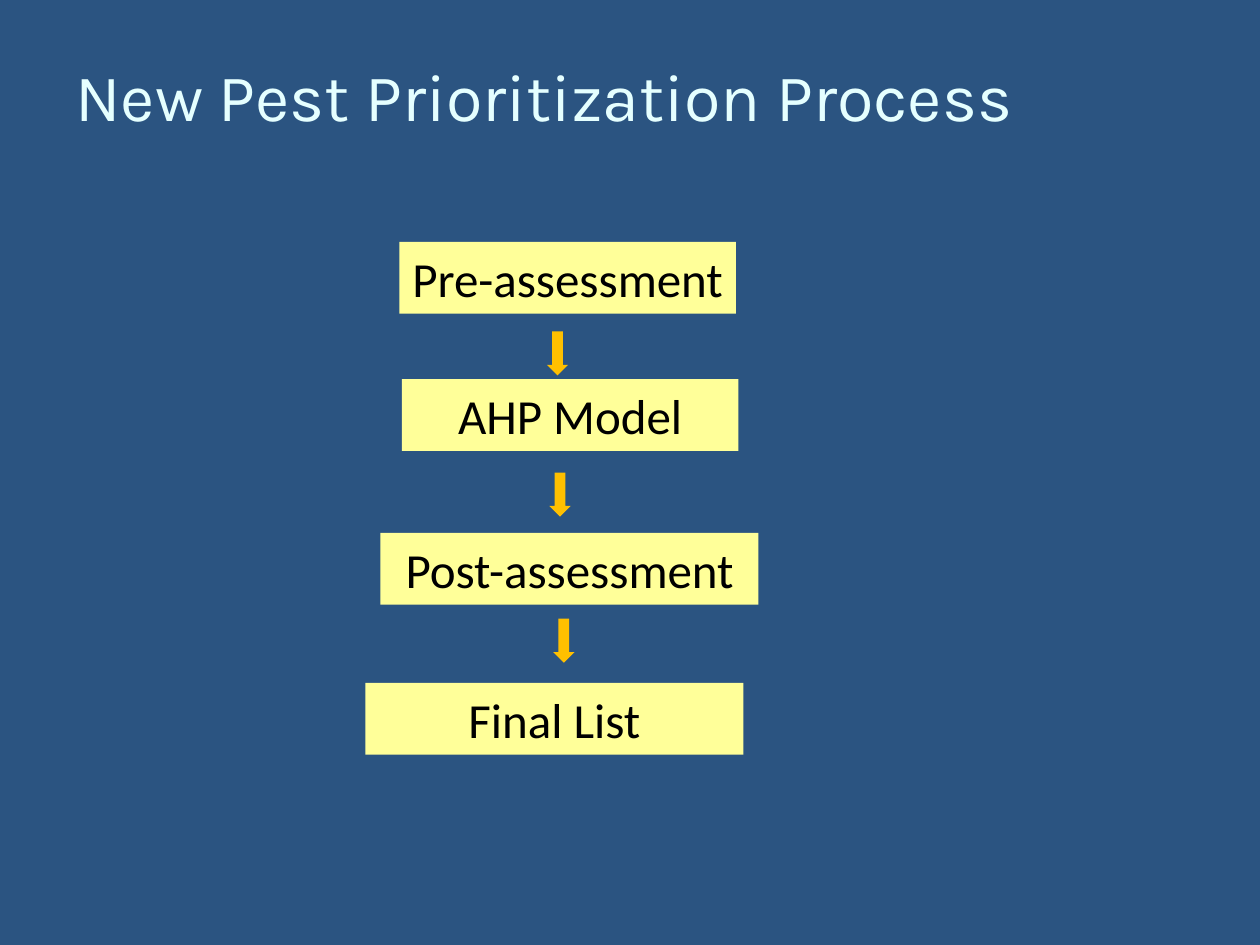
from pptx import Presentation
from pptx.dml.color import RGBColor
from pptx.enum.shapes import MSO_SHAPE
from pptx.enum.text import MSO_ANCHOR, MSO_AUTO_SIZE, PP_ALIGN
from pptx.util import Inches, Pt

COLORS = {
    "background": "2B5481",
    "title": "E5FFFF",
    "step": "FFFF99",
    "step_text": "000000",
    "arrow": "FFC000",
}
STEP_HEIGHT = 0.57
ARROW_WIDTH, ARROW_HEIGHT = 0.17, 0.35

# Offsets within the flow region: label, left, top, width
STEPS = [
    ("Pre-assessment", 0.27, 0, 2.67),
    ("AHP Model", 0.29, 1.09, 2.67),
    ("Post-assessment", 0.12, 2.31, 3),
    ("Final List", 0, 3.5, 3),
]
# Offsets within the flow region: left, top
ARROWS = [(1.44, 0.71), (1.46, 1.83), (1.49, 2.99)]


def rgb(name):
    return RGBColor.from_string(COLORS[name])


def style_text(frame, size, font_name, color):
    font = frame.paragraphs[0].runs[0].font
    font.size = Pt(size)
    font.name = font_name
    font.color.rgb = rgb(color)


def add_block(slide, preset, left, top, width, height, color):
    block = slide.shapes.add_shape(
        preset, Inches(left), Inches(top), Inches(width), Inches(height))
    block.shadow.inherit = False
    block.fill.solid()
    block.fill.fore_color.rgb = rgb(color)
    block.line.fill.background()
    return block


def add_title(slide, left, top, width, height):
    title = slide.shapes.add_textbox(
        Inches(left), Inches(top), Inches(width), Inches(height))
    frame = title.text_frame
    frame.word_wrap = True
    frame.vertical_anchor = MSO_ANCHOR.MIDDLE
    frame.text = "New Pest Prioritization Process"
    style_text(frame, 38, "Karla", "title")


def add_flow(slide, left, top):
    # Process steps
    for label, dx, dy, width in STEPS:
        step = add_block(slide, MSO_SHAPE.RECTANGLE, left + dx, top + dy,
                         width, STEP_HEIGHT, "step")
        frame = step.text_frame
        frame.word_wrap = True
        frame.auto_size = MSO_AUTO_SIZE.SHAPE_TO_FIT_TEXT
        frame.vertical_anchor = MSO_ANCHOR.TOP
        frame.text = label
        frame.paragraphs[0].alignment = PP_ALIGN.CENTER
        style_text(frame, 28, "Calibri", "step_text")

    # Arrows between the steps
    for dx, dy in ARROWS:
        add_block(slide, MSO_SHAPE.DOWN_ARROW, left + dx, top + dy,
                  ARROW_WIDTH, ARROW_HEIGHT, "arrow")


def main():
    presentation = Presentation()
    presentation.slide_width = Inches(10)
    presentation.slide_height = Inches(7.5)
    slide = presentation.slides.add_slide(presentation.slide_layouts[6])
    slide.background.fill.solid()
    slide.background.fill.fore_color.rgb = rgb("background")

    add_title(slide, 0.5, 0.25, 9, 1)
    add_flow(slide, 2.9, 1.92)
    presentation.save("out.pptx")


if __name__ == "__main__":
    main()
